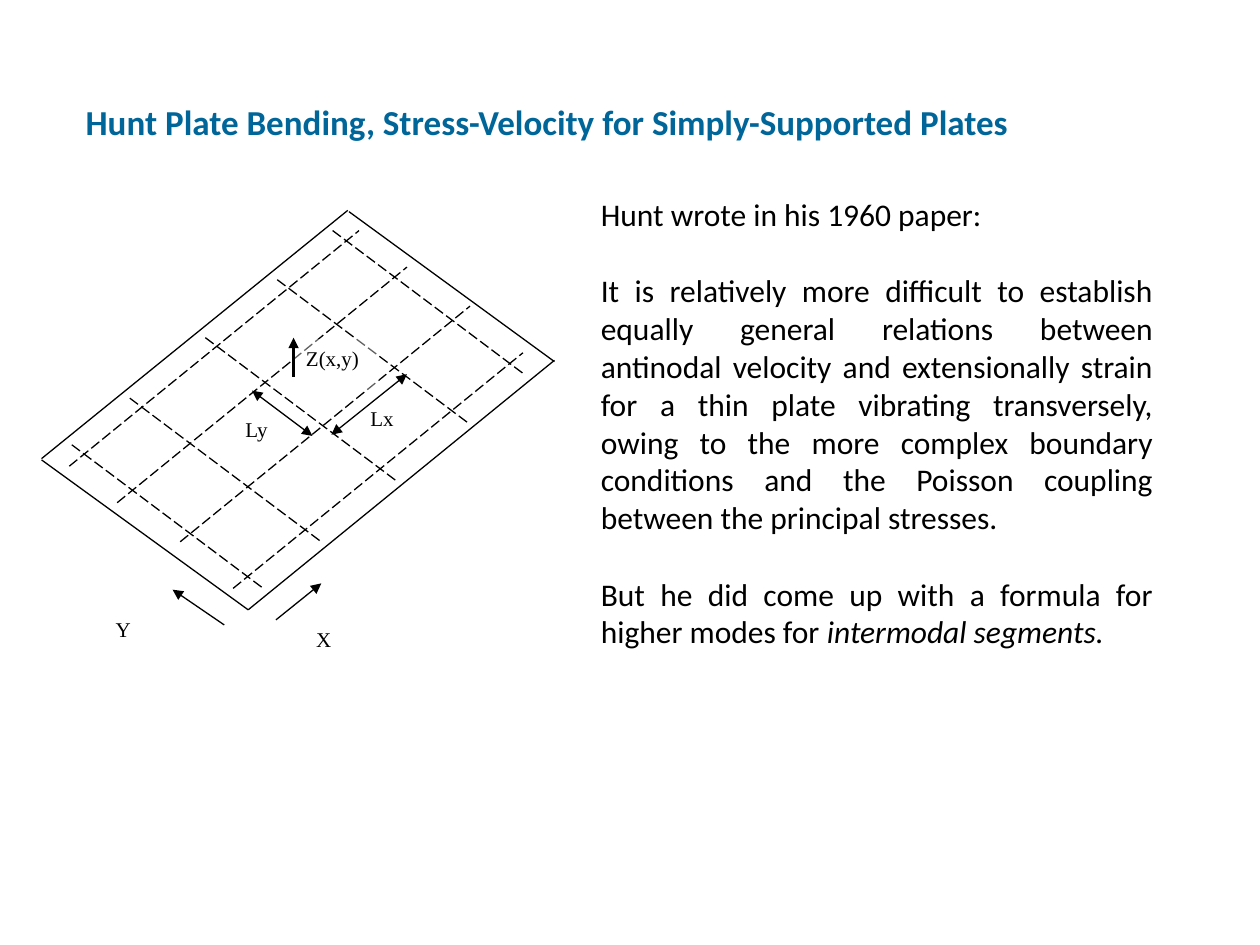
from lxml import etree
from pptx import Presentation
from pptx.dml.color import RGBColor
from pptx.enum import dml, shapes, text
from pptx.oxml.ns import qn
from pptx.util import Inches, Pt

TITLE = "Hunt Plate Bending, Stress-Velocity for Simply-Supported Plates"
# Each paragraph is a list of (text, italic) runs
BODY = [
    [("Hunt wrote in his 1960 paper:", False)],
    [("It is relatively more difficult to establish equally general relations "
      "between antinodal velocity and extensionally strain for a thin plate "
      "vibrating transversely, owing to the more complex boundary conditions "
      "and the Poisson coupling between the principal stresses.", False)],
    [("But he did come up with a formula for higher modes for ", False),
     ("intermodal segments.", True)],
]
# text, (left, top, width, height)
LABELS = [
    ("Ly", (1.85, 3.26, 0.43, 0.39)),
    ("Lx", (2.84, 3.17, 0.52, 0.48)),
    ("Y", (0.82, 4.84, 0.35, 0.39)),
    ("X", (2.41, 4.92, 0.35, 0.39)),
]
DEFLECTION_LABEL = ("Z(x,y)", (2.33, 2.69, 0.68, 0.42))
PLATE_EDGES = [
    ((0.33, 3.65), (1.97, 4.84)),
    ((0.33, 3.64), (2.76, 1.67)),
    ((1.97, 4.84), (4.4, 2.86)),
    ((2.77, 1.68), (4.4, 2.87)),
]
# Nodal lines: shared run of each family, then the start points
NODAL_LINES = [
    ((2.3, -1.87), [(0.55, 3.7), (0.93, 3.99), (1.43, 4.3), (1.85, 4.67)]),
    ((1.52, 1.14), [(0.57, 3.53), (1.03, 3.16), (1.63, 2.68), (2.2, 2.22),
                    (2.64, 1.83)]),
]
AXIS_ARROWS = [((2.19, 4.92), (2.55, 4.63)), ((1.78, 4.96), (1.37, 4.68))]
SPAN_ARROWS = [((2, 3.1), (2.48, 3.46)), ((2.63, 3.45), (3.23, 2.97))]
DEFLECTION_ARROW = ((2.33, 2.99), (2.33, 2.68))


def color(hex_code):
    return RGBColor.from_string(hex_code)


def add_run(paragraph, content, font="Calibri", size=18, fill="000000",
            bold=False, italic=False):
    run = paragraph.add_run()
    run.text = content
    run.font.name = font
    run.font.size = Pt(size)
    run.font.color.rgb = color(fill)
    run.font.bold = bold
    run.font.italic = italic


def add_label(group, content, box, opacity=None):
    shape = group.shapes.add_shape(shapes.MSO_SHAPE.RECTANGLE, *map(Inches, box))
    shape.shadow.inherit = False
    shape.line.fill.background()
    shape.fill.solid()
    shape.fill.fore_color.rgb = color("FFFFFF")
    if opacity is not None:
        fill = shape.element.spPr.find(qn("a:solidFill"))
        etree.SubElement(fill[0], qn("a:alpha"), val=str(opacity * 1000))
    frame = shape.text_frame
    frame.vertical_anchor = text.MSO_ANCHOR.TOP
    paragraph = frame.paragraphs[0]
    paragraph.alignment = text.PP_ALIGN.LEFT
    paragraph.space_after = Pt(10)
    add_run(paragraph, content, font="Times New Roman", size=12)


def add_line(group, start, end, width=0.75, dashed=False, arrows=()):
    """Draw a line; arrows lists the ends with a head: headEnd, tailEnd."""
    connector = group.shapes.add_connector(
        shapes.MSO_CONNECTOR.STRAIGHT, *map(Inches, (*start, *end)))
    connector.line.color.rgb = color("000000")
    connector.line.width = Pt(width)
    if dashed:
        connector.line.dash_style = dml.MSO_LINE.LONG_DASH
    properties = connector.element.spPr
    for arrow in arrows:
        etree.SubElement(properties.find(qn("a:ln")), qn(f"a:{arrow}"),
                         type="triangle")
    etree.SubElement(properties, qn("a:effectLst"))


def add_title(slide):
    title = slide.shapes.title
    title.left, title.top = Inches(0.58), Inches(0.75)
    title.width, title.height = Inches(8.33), Inches(0.44)
    frame = title.text_frame
    frame.auto_size = text.MSO_AUTO_SIZE.SHAPE_TO_FIT_TEXT
    frame.vertical_anchor = text.MSO_ANCHOR.TOP
    frame.paragraphs[0].alignment = text.PP_ALIGN.LEFT
    add_run(frame.paragraphs[0], TITLE, size=20, fill="006699", bold=True)


def add_body(slide):
    box = slide.shapes.add_textbox(*map(Inches, (4.67, 1.5, 4.58, 3.74)))
    frame = box.text_frame
    frame.word_wrap = True
    frame.auto_size = text.MSO_AUTO_SIZE.SHAPE_TO_FIT_TEXT
    for index, runs in enumerate(BODY):
        paragraph = frame.add_paragraph() if index else frame.paragraphs[0]
        paragraph.alignment = text.PP_ALIGN.JUSTIFY
        if index:
            paragraph.space_before = Pt(22)
        for content, italic in runs:
            add_run(paragraph, content, italic=italic)


def add_plate(slide):
    group = slide.shapes.add_group_shape()
    for content, box in LABELS:
        add_label(group, content, box)
    for start, end in PLATE_EDGES:
        add_line(group, start, end)
    for (dx, dy), starts in NODAL_LINES:
        for x, y in starts:
            add_line(group, (x, y), (x + dx, y + dy), dashed=True)
    for start, end in AXIS_ARROWS:
        add_line(group, start, end, arrows=["tailEnd"])
    for start, end in SPAN_ARROWS:
        add_line(group, start, end, arrows=["headEnd", "tailEnd"])
    add_label(group, *DEFLECTION_LABEL, opacity=38)
    add_line(group, *DEFLECTION_ARROW, width=1.25, arrows=["tailEnd"])


def main():
    presentation = Presentation()
    presentation.slide_width = Inches(10)
    presentation.slide_height = Inches(7.5)
    slide = presentation.slides.add_slide(presentation.slide_layouts[5])
    add_title(slide)
    add_body(slide)
    add_plate(slide)
    presentation.save("out.pptx")


if __name__ == "__main__":
    main()
